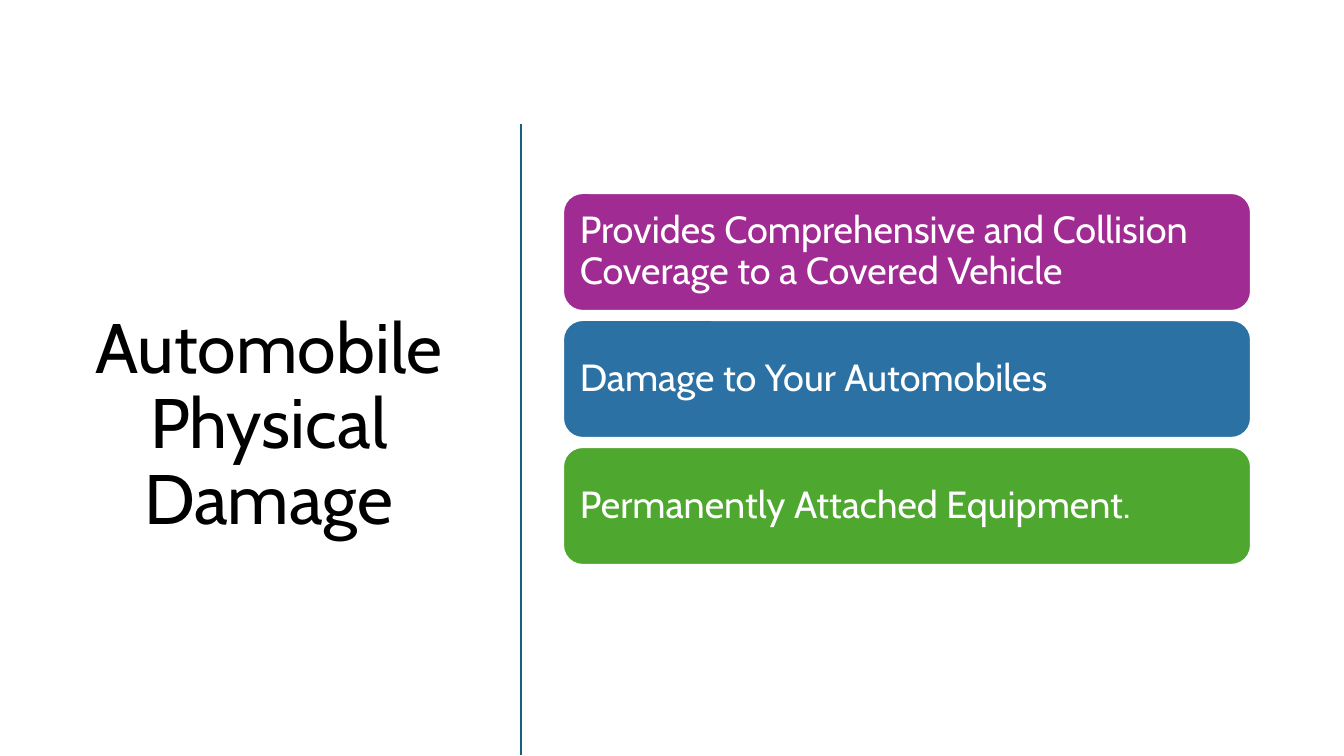
from dataclasses import dataclass

from lxml.etree import SubElement
from pptx import Presentation
from pptx.dml.color import RGBColor as Rgb
from pptx.enum.shapes import MSO_CONNECTOR as Conn, MSO_SHAPE as Shape
from pptx.enum.text import MSO_ANCHOR as Anchor, PP_ALIGN as Align
from pptx.oxml.ns import qn
from pptx.text.text import TextFrame as Frame
from pptx.util import Emu, Pt

FONT = "Cabin"
COLORS = {
    "black": "000000",
    "white": "FFFFFF",
    "teal": "156082",
    "purple": "A02B93",
    "blue": "2C71A4",
    "green": "4EA72E",
}


@dataclass(frozen=True)
class Card:
    text: str
    color: str


CARDS = [
    Card("Provides Comprehensive and Collision Coverage to a Covered Vehicle", "purple"),
    Card("Damage to Your Automobiles", "blue"),
    Card("Permanently Attached Equipment.", "green"),
]
LEFT, TOP, WIDTH, HEIGHT, PITCH = 563, 193, 688, 118, 127


def px(n: int) -> Emu:
    return Emu(round(n * 914400 / 100.8))


def rgb(name: str) -> Rgb:
    return Rgb.from_string(COLORS[name])


def write(frame: Frame, text: str, size: int, color: str, align: Align, inset: int) -> None:
    frame.word_wrap = True
    frame.vertical_anchor = Anchor.MIDDLE
    frame.margin_left = frame.margin_right = px(inset)
    frame.margin_top = frame.margin_bottom = px(inset)
    frame.text = text
    para = frame.paragraphs[0]
    para.alignment = align
    para.line_spacing = 0.9
    font = para.runs[0].font
    font.name, font.size = FONT, Pt(size)
    font.color.rgb = rgb(color)


def draw_card(slide, card: Card, top: int) -> None:
    box = slide.shapes.add_shape(
        Shape.ROUNDED_RECTANGLE, px(LEFT), px(top), px(WIDTH), px(HEIGHT))
    box.shadow.inherit = False
    box.fill.solid()
    box.fill.fore_color.rgb = rgb(card.color)
    box.line.color.rgb = rgb("white")
    box.line.width = Pt(1.5)
    write(box.text_frame, card.text, 27, "white", Align.LEFT, 11)


def main() -> None:
    deck = Presentation()
    deck.slide_width, deck.slide_height = px(1344), px(756)
    slide = deck.slides.add_slide(deck.slide_layouts[6])

    # Title on the left
    title = slide.shapes.add_textbox(px(52), px(118), px(434), px(616))
    write(title.text_frame, "Automobile Physical Damage", 50, "black", Align.CENTER, 10)

    # Vertical divider
    rule = slide.shapes.add_connector(Conn.STRAIGHT, px(521), px(124), px(521), px(755))
    rule.line.color.rgb = rgb("teal")
    rule.line.width = Pt(2)
    SubElement(rule._element.spPr, qn("a:effectLst"))

    # Stacked cards
    for i, card in enumerate(CARDS):
        draw_card(slide, card, TOP + i * PITCH)

    deck.save("out.pptx")


if __name__ == "__main__":
    main()
